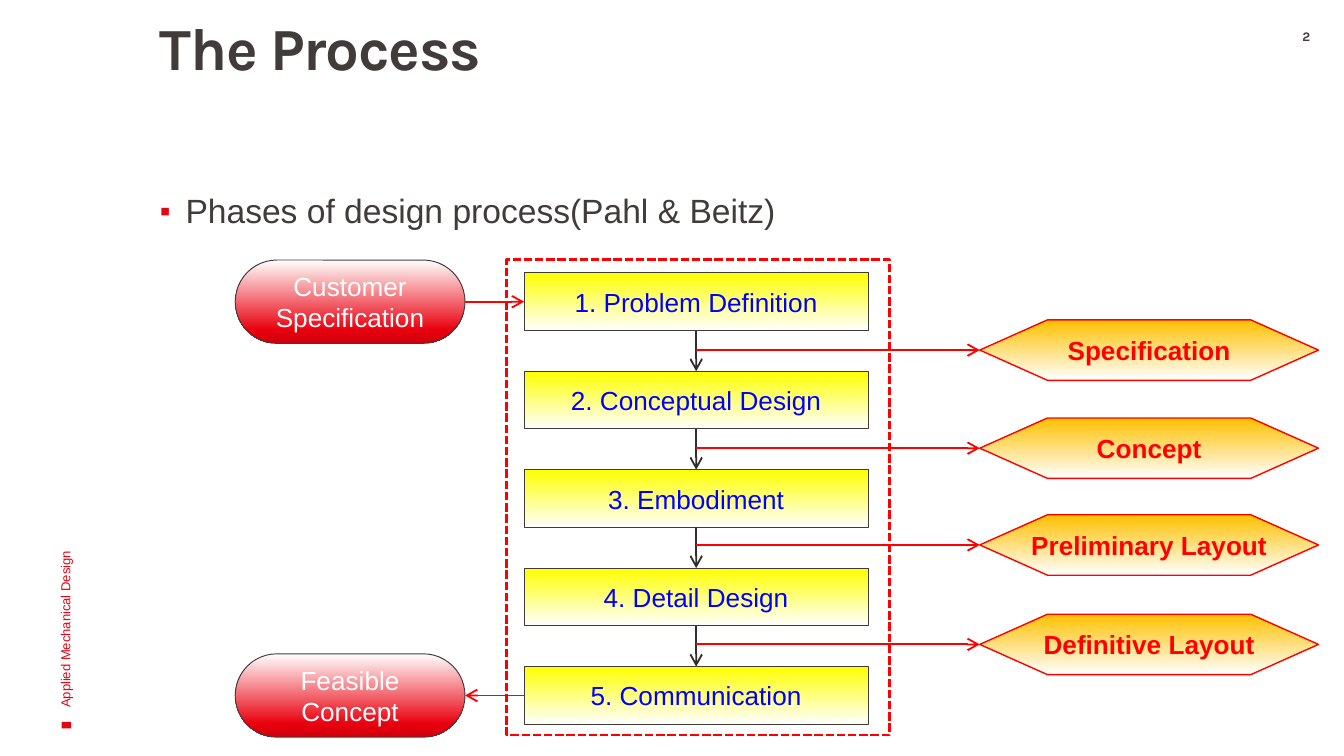
from lxml import etree
from pptx import Presentation
from pptx import util as u
from pptx.dml.color import RGBColor
from pptx.enum import dml, shapes, text
from pptx.oxml import parse_xml
from pptx.oxml.ns import nsdecls, qn

# Content
TITLE = "The Process"
BULLET = "Phases of design process(Pahl & Beitz)"
FOOTER = "Applied Mechanical Design"
PAGE_NUMBER = "2"
STEPS = ["1. Problem Definition", "2. Conceptual Design", "3. Embodiment",
         "4. Detail Design", "5. Communication"]
RESULTS = [("Specification", 2.38), ("Concept", 3.11),
           ("Preliminary Layout", 3.83), ("Definitive Layout", 4.57)]
TERMINALS = ["Customer Specification", "Feasible Concept"]

# Style
DARK, ACCENT, RED, BLUE, WHITE = "413C3A", "E30613", "FF0000", "0000FF", "FFFFFF"
ARROW_DARK = "312D2B"
YELLOW_FADE = [(0, "FFFF00"), (100, WHITE)]
ORANGE_FADE = [(0, "FFC000"), (100, WHITE)]
RED_FADE = [(0, WHITE), (84, "E9000E"), (100, "CF000C")]

# Layout in inches
STEP_LEFT, STEP_WIDTH, STEP_HEIGHT = 3.9, 2.56, 0.43
FIRST_STEP, LAST_STEP = 2.03, 4.96
STEP_PITCH = (LAST_STEP - FIRST_STEP) / (len(STEPS) - 1)
TERMINAL_HEIGHT, RESULT_HEIGHT = 0.62, 0.45
TOP, LEFT, BOTTOM, RIGHT = range(4)

presentation = Presentation()
presentation.slide_width = u.Inches(10)
presentation.slide_height = u.Inches(10 * 9 / 16)
slide = presentation.slides.add_slide(presentation.slide_layouts[6])


def color(value):
    return RGBColor.from_string(value)


def write(shape, words, size, font_color, name="Arial", bold=False,
          align=text.PP_ALIGN.LEFT, anchor=text.MSO_ANCHOR.TOP,
          insets=(0.1, 0.05, 0.1, 0.05), wrap=True):
    frame = shape.text_frame
    frame.word_wrap, frame.vertical_anchor = wrap, anchor
    (frame.margin_left, frame.margin_top,
     frame.margin_right, frame.margin_bottom) = map(u.Inches, insets)
    paragraph = frame.paragraphs[0]
    paragraph.alignment = align
    run = paragraph.add_run()
    run.text = words
    run.font.size, run.font.name, run.font.bold = u.Pt(size), name, bold
    run.font.color.rgb = color(font_color)
    return paragraph


def add_text(box, *args, **options):
    shape = slide.shapes.add_textbox(*map(u.Inches, box))
    return shape, write(shape, *args, **options)


def add_shape(kind, box):
    shape = slide.shapes.add_shape(kind, *map(u.Inches, box))
    shape.shadow.inherit = False
    return shape


def add_node(kind, box, words, fade, line_color, line_width, font_color, **options):
    shape = add_shape(kind, box)
    stops = "".join(f'<a:gs pos="{position * 1000}"><a:srgbClr val="{value}"/></a:gs>'
                    for position, value in fade)
    shape.fill.background()
    no_fill = shape._element.spPr.find(qn("a:noFill"))
    no_fill.getparent().replace(no_fill, parse_xml(
        f'<a:gradFill {nsdecls("a")} rotWithShape="1"><a:gsLst>{stops}</a:gsLst>'
        '<a:lin ang="5400000" scaled="0"/></a:gradFill>'))
    shape.line.color.rgb, shape.line.width = color(line_color), u.Pt(line_width)
    write(shape, words, 14, font_color, align=text.PP_ALIGN.CENTER,
          anchor=text.MSO_ANCHOR.MIDDLE, **options)
    return shape


def add_arrow(line_color, end, begin=None, start=(0, 0)):
    """Run an arrow to the (shape, side) in end, from a shape side or a point."""
    x, y = map(u.Inches, start)
    connector = slide.shapes.add_connector(shapes.MSO_CONNECTOR.STRAIGHT, x, y, x, y)
    if begin:
        connector.begin_connect(*begin)
    connector.end_connect(*end)
    connector.line.color.rgb, connector.line.width = color(line_color), u.Pt(1)
    line = connector.line._get_or_add_ln()
    etree.SubElement(line, qn("a:tailEnd"), type="arrow")
    etree.SubElement(connector._element.spPr, qn("a:effectLst"))


# Title, bullet and page number
_, title = add_text((0.99, 0.14, 5.2, 1.17), TITLE, 32, DARK, "Karla", True,
                    insets=(0.2, 0, 0.08, 0.05))
title.line_spacing = 0.9
title.runs[0].font._element.set("spc", "-70")

_, bullet = add_text((0.99, 1.4, 8.45, 3.96), BULLET, 18, DARK,
                     insets=(0.2, 0.05, 0.1, 0.05))
bullet.line_spacing = 0.9
properties = bullet._element.get_or_add_pPr()
properties.set("marL", str(u.Inches(0.19)))
properties.set("indent", str(u.Inches(-0.19)))
bullet_color = etree.SubElement(properties, qn("a:buClr"))
etree.SubElement(bullet_color, qn("a:srgbClr"), val=ACCENT)
etree.SubElement(properties, qn("a:buSzPct"), val="90000")
etree.SubElement(properties, qn("a:buFont"), typeface="Arial")
etree.SubElement(properties, qn("a:buChar"), char="▪")

add_text((9.44, 0.21, 0.56, 0.18), PAGE_NUMBER, 7, DARK, "Karla", True,
         align=text.PP_ALIGN.CENTER, insets=(0.1, 0, 0.1, 0))

# Sideways footer with its square marker
marker = add_shape(shapes.MSO_SHAPE.RECTANGLE, (0.47, 5.36, 0.05, 0.07))
marker.rotation = 270
marker.fill.solid()
marker.fill.fore_color.rgb = color(ACCENT)
marker.line.fill.background()
footer, _ = add_text((-1.34, 3.04, 3.65, 1), FOOTER, 7, ACCENT,
                     anchor=text.MSO_ANCHOR.MIDDLE)
footer.rotation = 270

# Dashed frame around the phases
frame = add_shape(shapes.MSO_SHAPE.RECTANGLE, (3.77, 1.93, 2.85, 3.54))
frame.fill.background()
frame.line.color.rgb, frame.line.width = color(RED), u.Pt(1.5)
frame.line.dash_style = dml.MSO_LINE.SQUARE_DOT

# Terminals, centred on the first and last phase
terminals = []
for words, step_top in zip(TERMINALS, (FIRST_STEP, LAST_STEP)):
    top = step_top + (STEP_HEIGHT - TERMINAL_HEIGHT) / 2
    terminal = add_node(shapes.MSO_SHAPE.ROUNDED_RECTANGLE,
                        (1.75, top, 1.71, TERMINAL_HEIGHT),
                        words, RED_FADE, DARK, 0.5, WHITE)
    terminal.adjustments[0] = 0.5
    terminals.append(terminal)

# Phases and their results
steps = [add_node(shapes.MSO_SHAPE.RECTANGLE,
                  (STEP_LEFT, FIRST_STEP + i * STEP_PITCH, STEP_WIDTH, STEP_HEIGHT),
                  words, YELLOW_FADE, DARK, 0.5, BLUE)
         for i, words in enumerate(STEPS)]

results = [add_node(shapes.MSO_SHAPE.FLOWCHART_PREPARATION,
                    (7.29, top, 2.52, RESULT_HEIGHT),
                    words, ORANGE_FADE, RED, 0.75, RED, bold=True, wrap=False)
           for words, top in RESULTS]

# Arrows
add_arrow(RED, (steps[0], LEFT), (terminals[0], RIGHT))
add_arrow(RED, (terminals[-1], RIGHT), (steps[-1], LEFT))
for upper, lower in zip(steps, steps[1:]):
    add_arrow(ARROW_DARK, (lower, TOP), (upper, BOTTOM))
for result, (_, top) in zip(results, RESULTS):
    add_arrow(RED, (result, LEFT),
              start=(STEP_LEFT + STEP_WIDTH / 2, top + RESULT_HEIGHT / 2))

presentation.save("out.pptx")
